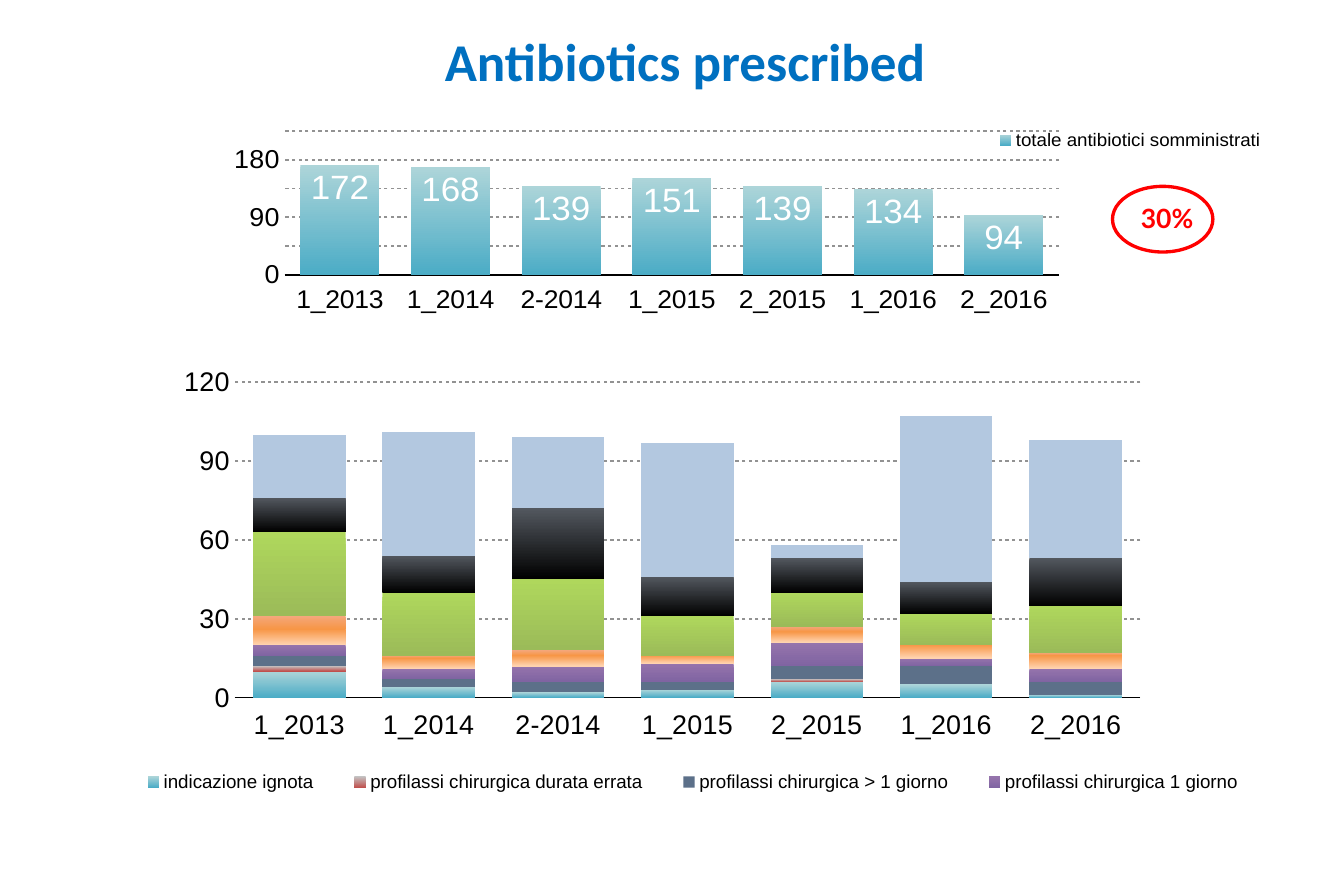
from pptx import Presentation
from pptx.chart.data import CategoryChartData
from pptx.dml.color import RGBColor
from pptx.enum.chart import (XL_CHART_TYPE, XL_LABEL_POSITION, XL_LEGEND_POSITION,
                             XL_TICK_LABEL_POSITION, XL_TICK_MARK)
from pptx.enum.shapes import MSO_SHAPE
from pptx.enum.text import MSO_ANCHOR, MSO_AUTO_SIZE, PP_ALIGN
from pptx.oxml import parse_xml
from pptx.oxml.ns import nsdecls, qn
from pptx.util import Pt

PERIODS = ["1_2013", "1_2014", "2-2014", "1_2015", "2_2015", "1_2016", "2_2016"]
TEAL = ("ADD5D9", "4BACC6")

# Series: name (empty = not in the legend), values,
# fill colours (one = solid, two = top to bottom)
TOTALS = [("totale antibiotici somministrati", (172, 168, 139, 151, 139, 134, 94), TEAL)]
REASONS = [
    ("indicazione ignota", (10, 4, 2, 3, 6, 5, 1), TEAL),
    ("profilassi chirurgica durata errata", (2, 0, 0, 0, 1, 0, 0), ("C3C3C3", "C0504D")),
    ("profilassi chirurgica > 1 giorno", (4, 3, 4, 3, 5, 7, 5), ("5C7089",)),
    ("profilassi chirurgica 1 giorno", (4, 4, 6, 7, 9, 3, 5), ("9574AC", "8064A2")),
    ("", (6, 4, 4, 3, 4, 5, 5), ("F79646", "FFD3AF")),
    ("", (5, 1, 2, 0, 2, 0, 1), ("F4A77C", "F79646")),
    ("", (32, 24, 27, 15, 13, 12, 18), ("AFD75C", "9BBB59")),
    ("", (13, 14, 27, 15, 13, 12, 18), ("53585F", "000000")),
    ("", (24, 47, 27, 51, 5, 63, 45), ("B3C8E0",)),
]


def rgb(value):
    return RGBColor.from_string(value)


def set_font(font, size, color, name="Arial", bold=False):
    font.size = Pt(size)
    font.color.rgb = rgb(color)
    font.name = name
    font.bold = bold


def set_fill(fill, colors):
    if len(colors) == 1:
        fill.solid()
        fill.fore_color.rgb = rgb(colors[0])
        return
    fill.gradient()
    fill.gradient_angle = 270
    for stop, color in zip(fill.gradient_stops, colors):
        stop.color.rgb = rgb(color)


def set_layout(element, index, box, inner=False):
    """Place a chart part by fractions of the chart area."""
    for old in element.findall(qn("c:layout")):
        element.remove(old)
    target = '<c:layoutTarget val="inner"/>' if inner else ""
    modes = '<c:xMode val="edge"/><c:yMode val="edge"/>'
    sizes = "".join(f'<c:{tag} val="{v}"/>' for tag, v in zip("xywh", box))
    element.insert(index, parse_xml(
        f'<c:layout {nsdecls("c")}><c:manualLayout>{target}{modes}{sizes}'
        '</c:manualLayout></c:layout>'))


def add_text(s, box, text, size, color, font, centred=False):
    tf = s.shapes.add_textbox(*map(Pt, box)).text_frame
    tf.word_wrap = centred
    p = tf.paragraphs[0]
    if centred:
        tf.vertical_anchor = MSO_ANCHOR.MIDDLE
        p.alignment = PP_ALIGN.CENTER
    else:
        tf.auto_size = MSO_AUTO_SIZE.SHAPE_TO_FIT_TEXT
    r = p.add_run()
    r.text = text
    set_font(r.font, size, color, font, True)


def add_columns(s, box, kind, series, overlap, step, top, cat_size,
                plot_box, legend_side, legend_box):
    data = CategoryChartData()
    data.categories = PERIODS
    for name, values, _ in series:
        data.add_series(name, values)
    chart = s.shapes.add_chart(kind, *map(Pt, box), data).chart
    chart.has_title = False
    set_font(chart.font, 10, "000000", "Calibri")

    # Columns
    plot = chart.plots[0]
    plot.gap_width = 40
    plot.overlap = overlap
    plot.vary_by_categories = False
    for ser, (_, _, colors) in zip(plot.series, series):
        ser.invert_if_negative = False
        set_fill(ser.format.fill, colors)

    # Axes
    for axis, size in ((chart.category_axis, cat_size), (chart.value_axis, 16.2)):
        axis.major_tick_mark = axis.minor_tick_mark = XL_TICK_MARK.NONE
        set_font(axis.tick_labels.font, size, "000000")
    cat, val = chart.category_axis, chart.value_axis
    cat.tick_label_position = XL_TICK_LABEL_POSITION.LOW
    cat.format.line.color.rgb = rgb("000000")
    cat.format.line.width = Pt(1)
    val.minimum_scale, val.maximum_scale, val.major_unit = 0, top, step
    val.format.line.fill.background()

    # Dashed gridlines
    val.has_major_gridlines = True
    grid = val.major_gridlines.format.line
    grid.color.rgb = rgb("929292")
    grid.width = Pt(1)
    ln = chart._chartSpace.find(".//" + qn("c:majorGridlines")).find(".//" + qn("a:ln"))
    ln.append(parse_xml(f'<a:custDash {nsdecls("a")}><a:ds d="200000" sp="200000"/>'
                        '</a:custDash>'))

    # Legend and plot placement
    chart.has_legend = True
    legend = chart.legend
    legend.position = legend_side
    legend.include_in_layout = True
    set_font(legend.font, 11.3, "000000")
    set_layout(legend._element, 1, legend_box)
    unnamed = [i for i, (name, _, _) in enumerate(series) if not name]
    for i in reversed(unnamed):
        legend._element.insert(1, parse_xml(
            f'<c:legendEntry {nsdecls("c")}><c:idx val="{i}"/><c:delete val="1"/>'
            '</c:legendEntry>'))
    set_layout(chart._chartSpace.find(".//" + qn("c:plotArea")), 0, plot_box, True)
    return plot


def add_reasons(s, box):
    add_columns(s, box, XL_CHART_TYPE.COLUMN_STACKED, REASONS, 100, 30, 120, 16.2,
                (0.105, 0.05, 0.781, 0.714), XL_LEGEND_POSITION.BOTTOM,
                (0, 0.92, 1, 0.07))


def add_totals(s, box):
    plot = add_columns(s, box, XL_CHART_TYPE.COLUMN_CLUSTERED, TOTALS, -10, 45, 225, 16,
                       (0.048, 0.108, 0.689, 0.734), XL_LEGEND_POSITION.RIGHT,
                       (0.67, 0.09, 0.26, 0.13))
    plot.has_data_labels = True
    labels = plot.data_labels
    labels.show_value = True
    labels.position = XL_LABEL_POSITION.INSIDE_END
    labels.number_format = "#,##0"
    labels.number_format_is_linked = False
    set_font(labels.font, 21.1, "FFFFFF")


def add_callout(s, box):
    x, y, w, h = box
    add_text(s, (x + 10, y + 6, 55, 27), "30%", 16, "FF0000", "Lato")
    oval = s.shapes.add_shape(MSO_SHAPE.OVAL, *map(Pt, (x, y, w, h)))
    oval.shadow.inherit = False
    oval.fill.background()
    oval.line.color.rgb = rgb("FF0000")
    oval.line.width = Pt(2)


def main():
    prs = Presentation()
    prs.slide_width, prs.slide_height = Pt(810), Pt(540)
    s = prs.slides.add_slide(prs.slide_layouts[6])
    add_text(s, (67.5, 16.5, 691, 40), "Antibiotics prescribed", 32, "0070C0",
             "Calibri", centred=True)
    add_reasons(s, (68, 217, 699, 266.4))
    add_totals(s, (139, 66.2, 677.5, 123))
    add_callout(s, (670.5, 112.3, 60.5, 39.6))
    prs.save("out.pptx")


if __name__ == "__main__":
    main()
